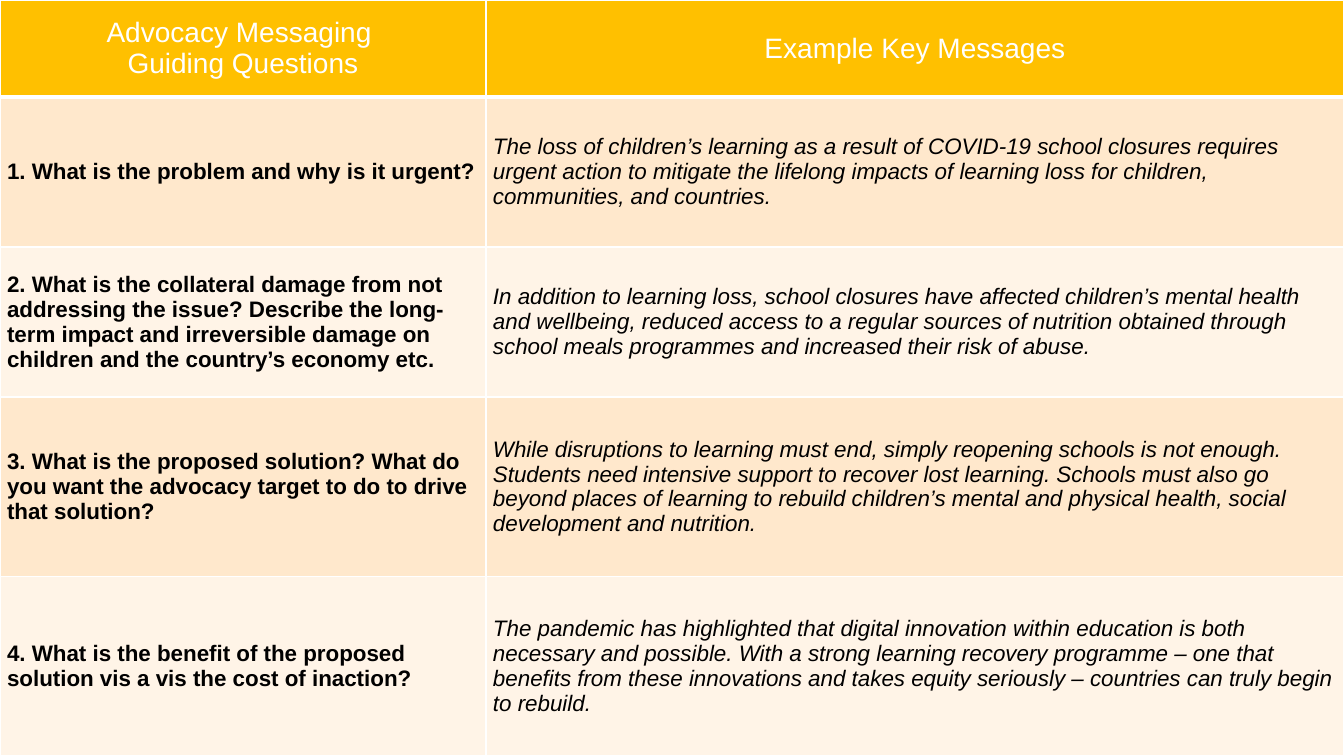
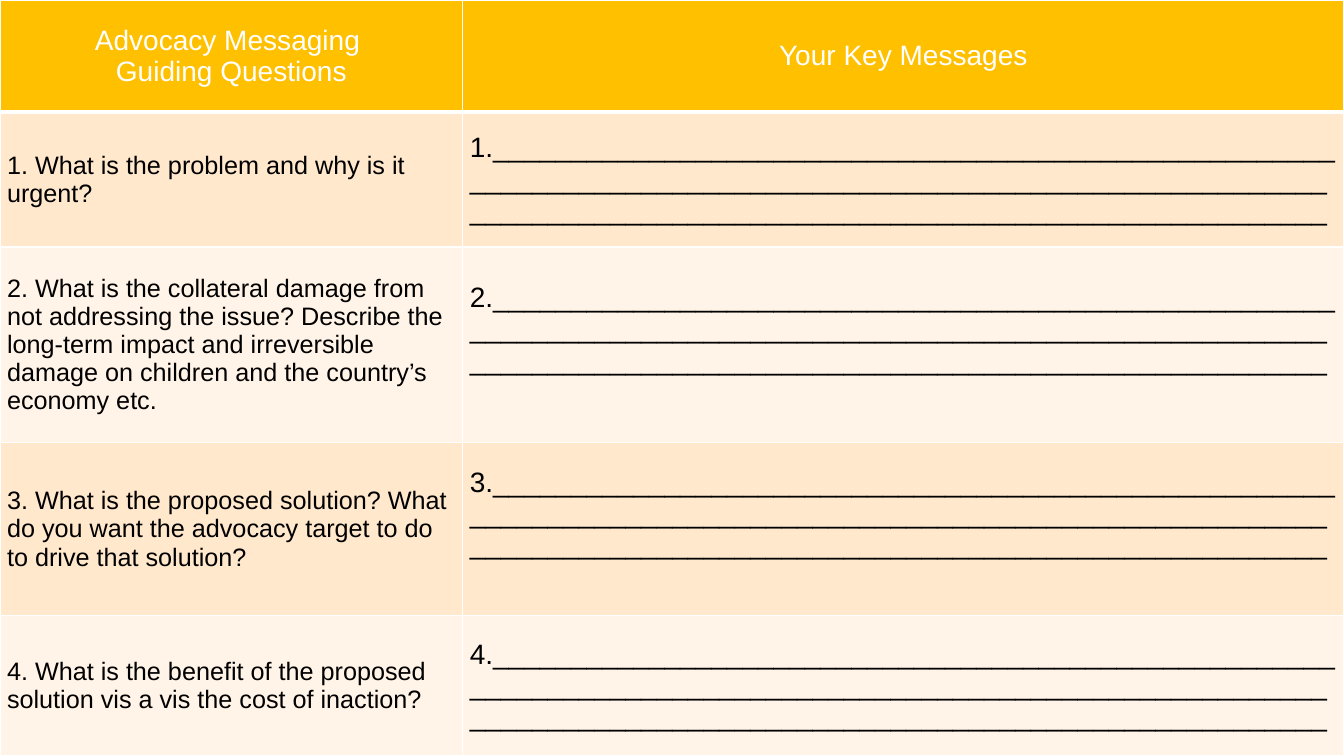
from lxml import etree
from pptx import Presentation
from pptx import util as u
from pptx.dml.color import RGBColor
from pptx.enum import text
from pptx.oxml.ns import qn

WIDE, HIGH = 13.33, 7.5
HUES = {"head": "FFC000", "odd": "FFE8CC", "even": "FFF4E7",
        "ink": "000000", "line": "FFFFFF"}

# Text formats
HEAD = {"size": u.Pt(20), "bold": False, "italic": False}
ASK = {"size": u.Pt(16), "bold": True, "italic": False}
SAY = {"size": u.Pt(16), "bold": False, "italic": True}
PLAIN = {"size": u.Pt(18), "bold": False, "italic": False}
BLANK = {"size": u.Pt(20), "bold": False, "italic": False}

# Wording
TITLE = "Advocacy Messaging \nGuiding Questions"
ASKS = [
    "1. What is the problem and why is it urgent?",
    "2. What is the collateral damage from not addressing the issue? Describe "
    "the long-term impact and irreversible damage on children and the "
    "country’s economy etc.",
    "3. What is the proposed solution? What do you want the advocacy target "
    "to do to drive that solution?",
    "4. What is the benefit of the proposed solution vis a vis the cost of "
    "inaction?",
]
SAYS = [
    "The loss of children’s learning as a result of COVID-19 school closures "
    "requires urgent action to mitigate the lifelong impacts of learning loss "
    "for children, communities, and countries.",
    "In addition to learning loss, school closures have affected children’s "
    "mental health and wellbeing, reduced access to a regular sources of "
    "nutrition obtained through school meals programmes and increased their "
    "risk of abuse.",
    "While disruptions to learning must end, simply reopening schools is not "
    "enough. Students need intensive support to recover lost learning. Schools "
    "must also go beyond places of learning to rebuild children’s mental and "
    "physical health, social development and nutrition.",
    "The pandemic has highlighted that digital innovation within education is "
    "both necessary and possible. With a strong learning recovery programme – "
    "one that benefits from these innovations and takes equity seriously – "
    "countries can truly begin to rebuild.",
]
BLANKS = [f"{n}." + "_" * 164 for n in range(1, 5)]


class Deck:
    def __init__(self):
        self.prs = Presentation()
        self.prs.slide_width = u.Inches(WIDE)
        self.prs.slide_height = u.Inches(HIGH)

    def page(self):
        self.slide = self.prs.slides.add_slide(self.prs.slide_layouts[6])

    def edge(self, cell, base):
        """Draw the white cell borders; base is the bottom width in points."""
        props = cell._tc.get_or_add_tcPr()
        for side, width in (("L", 1), ("R", 1), ("T", 1), ("B", base)):
            line = etree.SubElement(props, qn(f"a:ln{side}"), w=str(u.Pt(width)))
            fill = etree.SubElement(line, qn("a:solidFill"))
            etree.SubElement(fill, qn("a:srgbClr"), val=HUES["line"])

    def cell(self, cell, words, style, hue, foot=0):
        head = hue == "head"
        self.edge(cell, 3 if head else 1)
        cell.fill.solid()
        cell.fill.fore_color.rgb = RGBColor.from_string(HUES[hue])
        form = {"vertical_anchor": text.MSO_ANCHOR.MIDDLE,
                "margin_left": u.Inches(0.07), "margin_right": u.Inches(0.07),
                "margin_top": 0, "margin_bottom": u.Inches(foot)}
        for key, value in form.items():
            setattr(cell, key, value)
        cell.text = words
        ink = RGBColor.from_string(HUES["line" if head else "ink"])
        for para in cell.text_frame.paragraphs:
            para.alignment = text.PP_ALIGN.CENTER if head else text.PP_ALIGN.LEFT
            for run in para.runs:
                for key, value in {"name": "Arial", **style}.items():
                    setattr(run.font, key, value)
                run.font.color.rgb = ink

    def table(self, title, notes, styles, left, highs, feet=(0, 0, 0, 0)):
        grid = self.slide.shapes.add_table(
            5, 2, 0, 0, u.Inches(WIDE), u.Inches(HIGH)).table
        grid.horz_banding = False
        for col, width in zip(grid.columns, (left, WIDE - left)):
            col.width = u.Inches(width)
        for row, high in zip(grid.rows, highs):
            row.height = u.Inches(high)
        # Header row
        for col, words in enumerate((TITLE, title)):
            self.cell(grid.cell(0, col), words, HEAD, "head")
        # Question rows
        for row, (ask, note, foot) in enumerate(zip(ASKS, notes, feet), 1):
            hue = "odd" if row % 2 else "even"
            self.cell(grid.cell(row, 0), ask, styles[0], hue)
            self.cell(grid.cell(row, 1), note, styles[1], hue, foot)


def main():
    deck = Deck()

    # Example messages
    deck.page()
    deck.table("Example Key Messages", SAYS, (ASK, SAY), 4.82,
               (0.96, 1.49, 1.49, 1.78, 1.78))

    # Lines to fill in
    deck.page()
    deck.table("Your Key Messages", BLANKS, (PLAIN, BLANK), 4.59,
               (1.11, 1.34, 1.94, 1.72, 1.39), (0, 0.31, 0.31, 0))

    deck.prs.save("out.pptx")


if __name__ == "__main__":
    main()
